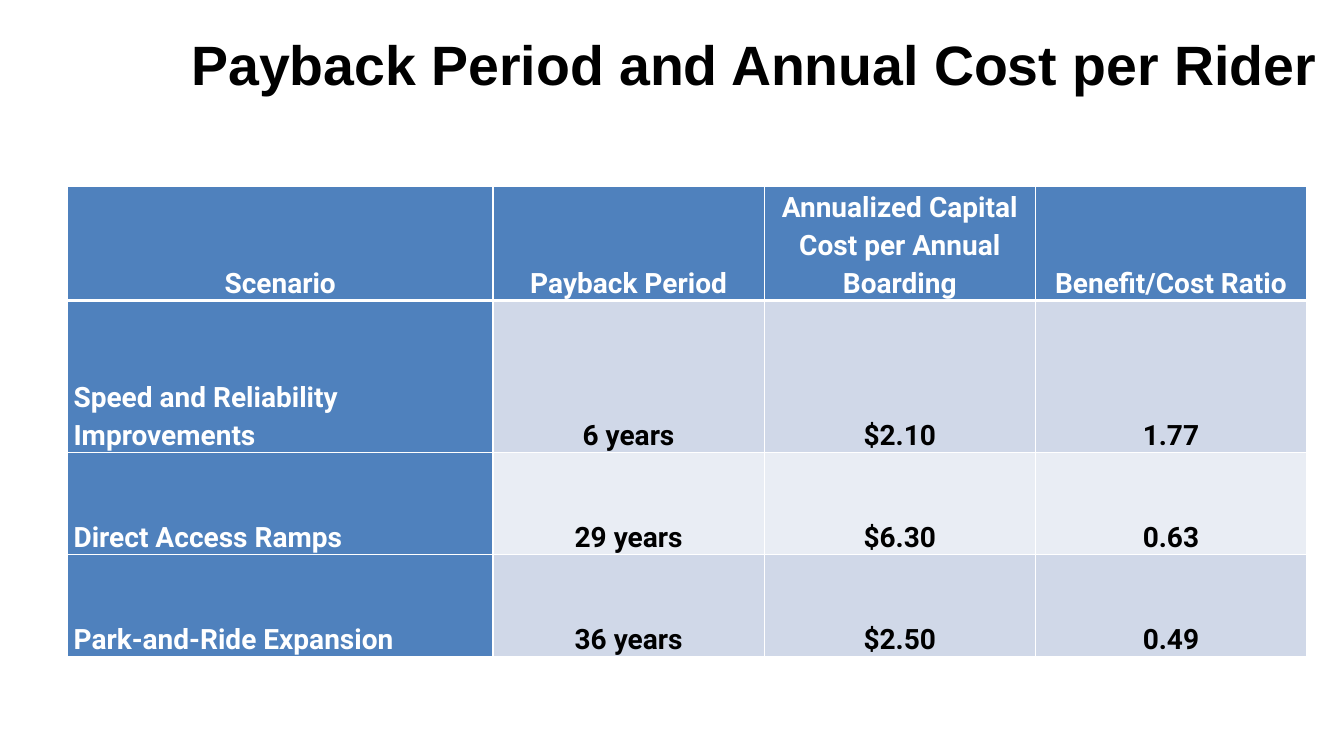
from lxml import etree
from pptx import Presentation
from pptx import util as u
from pptx.dml.color import RGBColor
from pptx.enum import text
from pptx.oxml.ns import qn

BLACK = RGBColor(0x00, 0x00, 0x00)
WHITE = RGBColor(0xFF, 0xFF, 0xFF)
BLUE = RGBColor(0x4F, 0x81, 0xBD)
BANDS = (RGBColor(0xD0, 0xD8, 0xE8), RGBColor(0xE9, 0xED, 0xF4))

ROWS = (
    ("Scenario", "Payback Period",
     "Annualized Capital Cost per Annual Boarding", "Benefit/Cost Ratio"),
    ("Speed and Reliability Improvements", "6 years", "$2.10", "1.77"),
    ("Direct Access Ramps", "29 years", "$6.30", "0.63"),
    ("Park-and-Ride Expansion", "36 years", "$2.50", "0.49"),
)
WIDTHS = (4.22, 2.69, 2.69, 2.69)
HEIGHTS = (1.13, 1.51, 1.01, 1.01)


def add_run(para, words, face, size, color):
    run = para.add_run()
    run.text = words
    font = run.font
    font.name, font.size, font.bold = face, u.Pt(size), True
    font.color.rgb = color


def add_title(slide, words):
    title = slide.shapes.title
    title.left, title.top = u.Inches(1.63), u.Inches(0)
    title.width, title.height = u.Inches(11.7), u.Inches(1.25)
    frame = title.text_frame
    frame.word_wrap = True
    frame.auto_size = text.MSO_AUTO_SIZE.NONE
    frame.vertical_anchor = text.MSO_ANCHOR.MIDDLE
    para = frame.paragraphs[0]
    para.alignment = text.PP_ALIGN.CENTER
    add_run(para, words, "Arial", 39.6, BLACK)


def set_edge(cell, side, width):
    props = cell._tc.get_or_add_tcPr()
    line = etree.SubElement(props, qn("a:ln" + side), w=str(u.Pt(width)))
    fill = etree.SubElement(line, qn("a:solidFill"))
    etree.SubElement(fill, qn("a:srgbClr"), val=str(WHITE))


def style_cell(cell, row, col, words):
    head, side = row == 0, col == 0
    cell.margin_left = cell.margin_right = u.Inches(0.06)
    cell.margin_top = cell.margin_bottom = u.Inches(0)
    cell.vertical_anchor = text.MSO_ANCHOR.BOTTOM
    edges = {"L": 1, "R": 1, "T": 3 if row == 1 else 1, "B": 3 if head else 1}
    for edge, width in edges.items():
        set_edge(cell, edge, width)
    cell.fill.solid()
    cell.fill.fore_color.rgb = BLUE if head or side else BANDS[(row - 1) % 2]
    para = cell.text_frame.paragraphs[0]
    para.line_spacing = 1.15
    left = side and not head
    para.alignment = text.PP_ALIGN.LEFT if left else text.PP_ALIGN.CENTER
    add_run(para, words, "Roboto", 20, WHITE if head or side else BLACK)


def add_grid(slide):
    frame = slide.shapes.add_table(
        len(ROWS), len(WIDTHS), u.Inches(0.67), u.Inches(1.85),
        u.Inches(sum(WIDTHS)), u.Inches(sum(HEIGHTS)))
    table = frame.table
    for col, width in zip(table.columns, WIDTHS):
        col.width = u.Inches(width)
    for row, height in zip(table.rows, HEIGHTS):
        row.height = u.Inches(height)
    for r, line in enumerate(ROWS):
        for c, words in enumerate(line):
            style_cell(table.cell(r, c), r, c, words)


def main():
    deck = Presentation()
    deck.slide_width, deck.slide_height = u.Inches(13.33), u.Inches(7.5)
    slide = deck.slides.add_slide(deck.slide_layouts[5])
    add_title(slide, "Payback Period and Annual Cost per Rider")
    add_grid(slide)
    deck.save("out.pptx")


if __name__ == "__main__":
    main()
